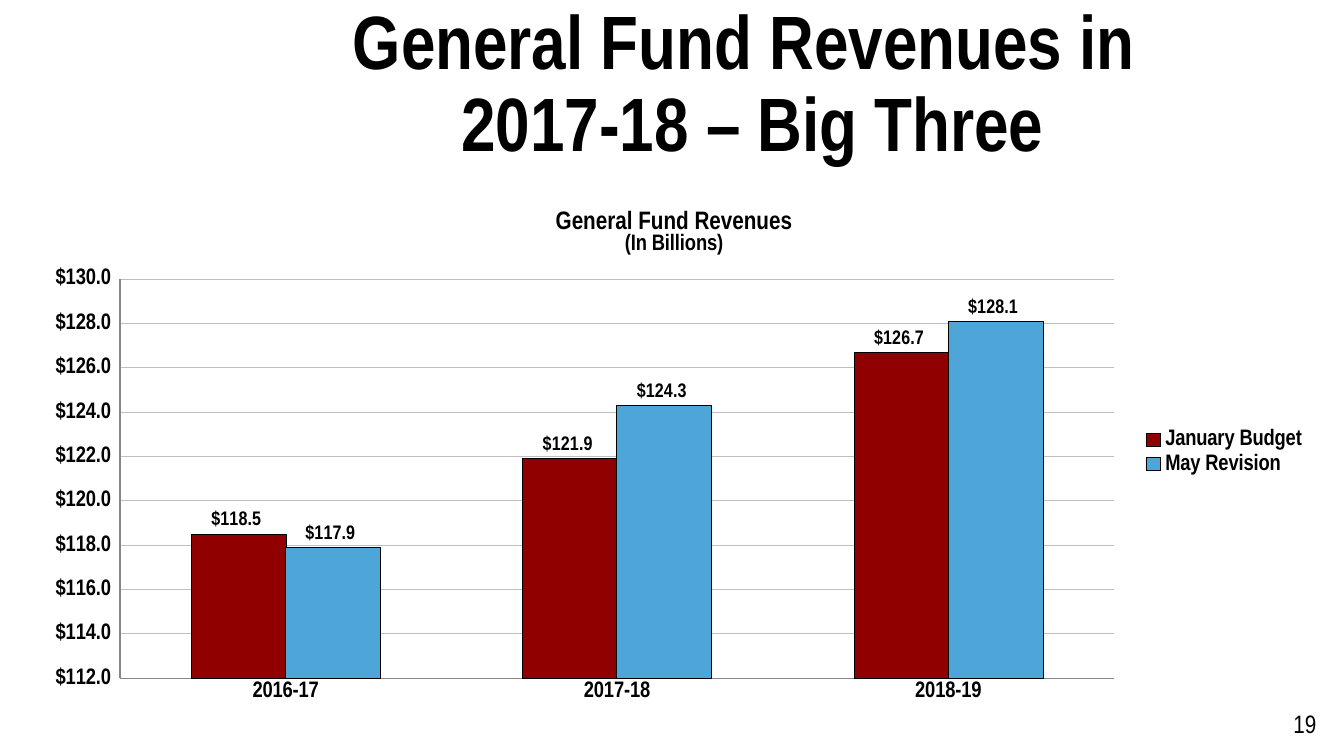
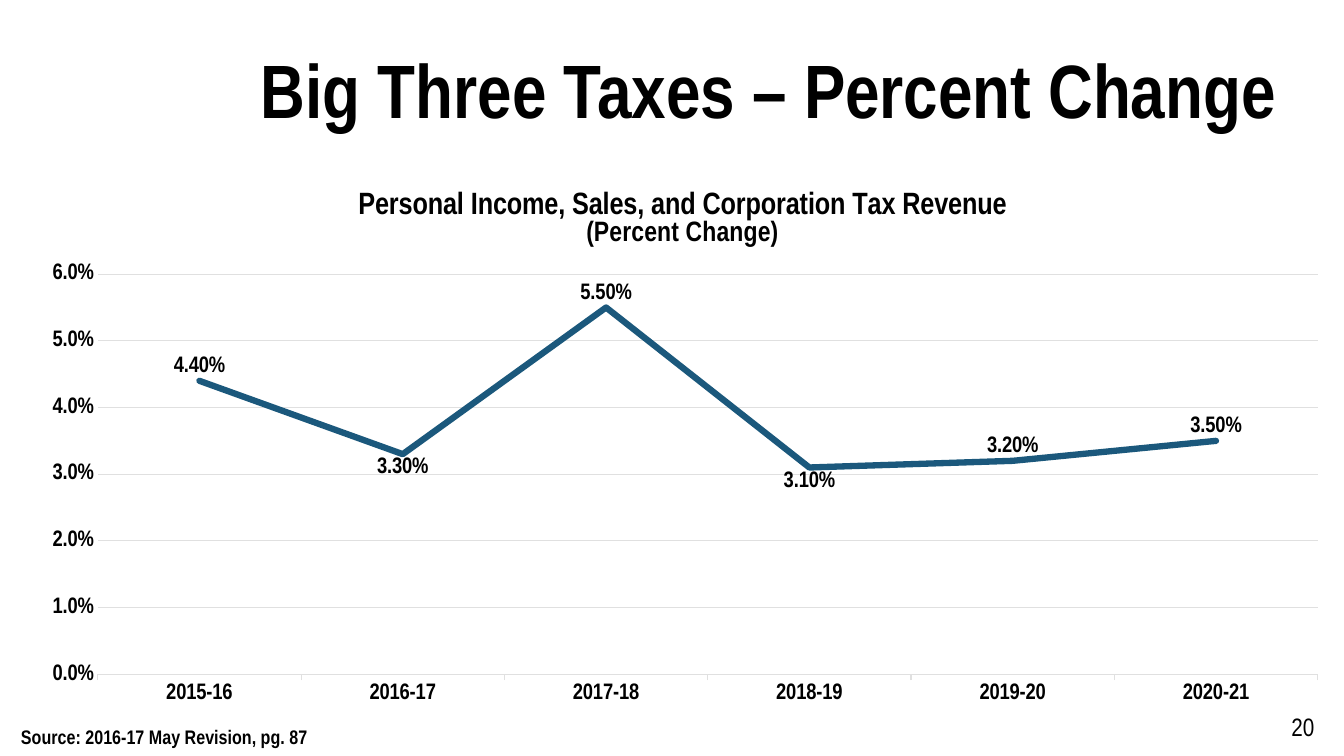
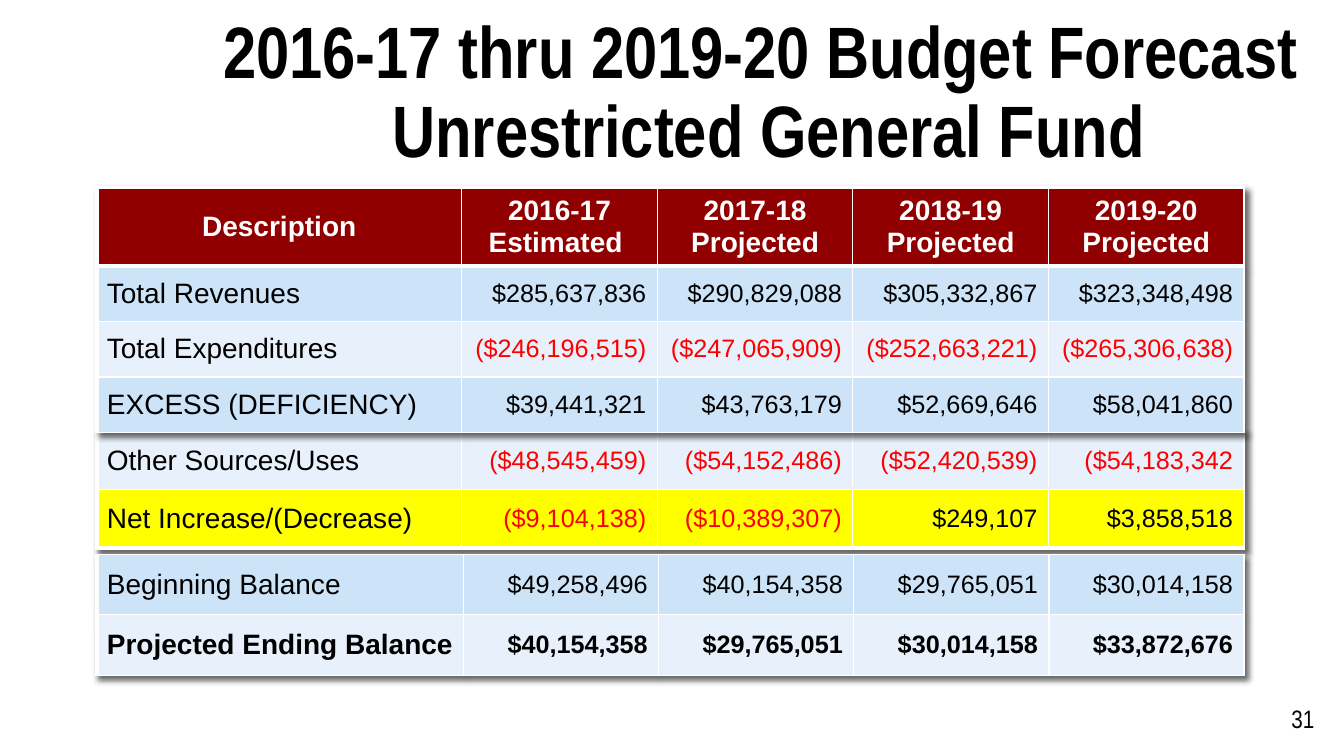
from dataclasses import dataclass

from lxml import etree
from pptx import Presentation
from pptx.chart.data import CategoryChartData
from pptx.dml.color import RGBColor
from pptx.enum.chart import XL_CHART_TYPE as ChartType
from pptx.enum.chart import XL_LABEL_POSITION as LabelPosition
from pptx.enum.chart import XL_LEGEND_POSITION as LegendPosition
from pptx.enum.chart import XL_TICK_MARK as TickMark
from pptx.enum.text import MSO_ANCHOR as Anchor
from pptx.enum.text import MSO_AUTO_SIZE as AutoSize
from pptx.enum.text import PP_ALIGN as Align
from pptx.oxml import parse_xml
from pptx.oxml.ns import nsdecls, qn
from pptx.util import Inches, Pt


@dataclass(frozen=True)
class Theme:
    """Hold the colours, fonts and type sizes that the slides share."""

    black: str = "000000"
    white: str = "FFFFFF"
    crimson: str = "900000"
    sky: str = "4EA5D8"
    navy: str = "1B587C"
    red: str = "FF0000"
    yellow: str = "FFFF00"
    band_dark: str = "CDE3F8"
    band_light: str = "E8F1FB"
    grid_dark: str = "BFBFBF"
    grid_light: str = "E0E0E0"
    axis_gray: str = "868686"
    narrow: str = "Arial Narrow"
    plain: str = "Arial"
    title_size: int = 54
    long_title_size: int = 52
    label_size: int = 20
    number_size: int = 18
    axis_size: int = 16
    small_size: int = 14


THEME = Theme()
TABLE_LEFT, TABLE_WIDTH = 0.96, 11.38
DOLLARS = '"$"#,##0.0_);[Red]\\("$"#,##0.0\\)'


def style_font(font, size, color=THEME.black, name=THEME.narrow, bold=False):
    """Set size, colour, typeface and weight of a font."""
    font.size = Pt(size)
    font.name = name
    font.bold = bold
    font.color.rgb = RGBColor.from_string(color)


def write_text(frame, text, sizes, align=Align.LEFT, spacing=None, **font_format):
    """Write one paragraph per line, with one size or a size for each line."""
    lines = text.split("\n")
    if isinstance(sizes, int):
        sizes = [sizes] * len(lines)
    for index, (line, size) in enumerate(zip(lines, sizes)):
        paragraph = frame.add_paragraph() if index else frame.paragraphs[0]
        paragraph.text = line
        paragraph.alignment = align
        if spacing:
            paragraph.line_spacing = spacing
        for run in paragraph.runs:
            style_font(run.font, size, **font_format)


def style_line(line, color, width):
    """Give a line a colour and a width in points."""
    line.color.rgb = RGBColor.from_string(color)
    line.width = Pt(width)


def add_text_box(slide, box, text, size, **font_format):
    """Add a text box that grows with its text."""
    frame = slide.shapes.add_textbox(*map(Inches, box)).text_frame
    frame.word_wrap = True
    frame.auto_size = AutoSize.SHAPE_TO_FIT_TEXT
    write_text(frame, text, size, **font_format)


def add_slide(presentation, title, number, title_corner, number_corner,
              size=THEME.title_size):
    """Add a slide with its title and page number."""
    slide = presentation.slides.add_slide(presentation.slide_layouts[5])
    shape = slide.shapes.title
    shape.left, shape.top = map(Inches, title_corner)
    shape.width, shape.height = Inches(11.23), Inches(1.45)
    frame = shape.text_frame
    frame.word_wrap = True
    frame.auto_size = AutoSize.NONE
    frame.vertical_anchor = Anchor.MIDDLE
    write_text(frame, title, size, align=Align.CENTER, spacing=0.9, bold=True)
    add_text_box(slide, (*number_corner, 0.53, 0.4), number, THEME.number_size)
    return slide


def place_plot(chart, chart_box, plot_box):
    """Fix the inner plot area, given in slide inches."""
    left, top, width, height = chart_box
    fractions = {
        "x": (plot_box[0] - left) / width,
        "y": (plot_box[1] - top) / height,
        "w": plot_box[2] / width,
        "h": plot_box[3] / height,
    }
    plot_area = chart.element.find(".//" + qn("c:plotArea"))
    for old_layout in plot_area.findall(qn("c:layout")):
        plot_area.remove(old_layout)
    layout = parse_xml(f"<c:layout {nsdecls('c')}><c:manualLayout/></c:layout>")
    settings = {"layoutTarget": "inner", "xMode": "edge", "yMode": "edge", **fractions}
    for tag, value in settings.items():
        etree.SubElement(layout[0], qn("c:" + tag)).set("val", str(value))
    plot_area.insert(0, layout)


def style_value_axis(axis, limits, step, number_format, grid_color):
    """Set scale, number format and gridlines of a value axis."""
    axis.minimum_scale, axis.maximum_scale = limits
    axis.major_unit = step
    axis.major_tick_mark = TickMark.NONE
    axis.tick_labels.number_format = number_format
    axis.tick_labels.number_format_is_linked = False
    axis.has_major_gridlines = True
    style_line(axis.major_gridlines.format.line, grid_color, 0.75)


def add_chart(slide, kind, box, plot_box, title, title_sizes, categories, series,
              number_format):
    """Add a chart with a two-line title and value labels."""
    data = CategoryChartData(number_format=number_format)
    data.categories = categories
    for name, values in series:
        data.add_series(name, values)
    chart = slide.shapes.add_chart(kind, *map(Inches, box), data).chart
    style_font(chart.font, THEME.axis_size, bold=True)
    chart.has_title = True
    chart.chart_title.include_in_layout = False
    write_text(chart.chart_title.text_frame, title, title_sizes,
               align=Align.CENTER, bold=True)
    chart.has_legend = False
    for axis in (chart.category_axis, chart.value_axis):
        style_font(axis.tick_labels.font, THEME.axis_size, bold=True)
    place_plot(chart, box, plot_box)
    plot = chart.plots[0]
    plot.vary_by_categories = False
    return chart, plot


def label_values(series, size, position, number_format):
    """Show the values of a series beside its points."""
    labels = series.data_labels
    labels.show_value = True
    labels.position = position
    labels.number_format = number_format
    labels.number_format_is_linked = False
    style_font(labels.font, size, bold=True)


def add_revenue_chart(slide):
    """Add the clustered columns of General Fund revenues."""
    chart, plot = add_chart(
        slide, ChartType.COLUMN_CLUSTERED,
        (0.3, 1.89, 12.77, 5.19), (1.19, 2.77, 9.86, 3.96),
        "General Fund Revenues\n(In Billions)", (18, 16),
        ("2016-17", "2017-18", "2018-19"),
        (("January Budget", (118.5, 121.9, 126.7)),
         ("May Revision", (117.9, 124.3, 128.1))),
        DOLLARS)
    plot.gap_width = 150
    plot.overlap = 1
    for series, color in zip(plot.series, (THEME.crimson, THEME.sky)):
        series.format.fill.solid()
        series.format.fill.fore_color.rgb = RGBColor.from_string(color)
        style_line(series.format.line, THEME.black, 0.5)
        label_values(series, THEME.small_size, LabelPosition.OUTSIDE_END, DOLLARS)
    style_value_axis(chart.value_axis, (112, 130), 2, DOLLARS, THEME.grid_dark)
    chart.category_axis.major_tick_mark = TickMark.NONE
    for axis in (chart.category_axis, chart.value_axis):
        style_line(axis.format.line, THEME.axis_gray, 0.75)
    chart.has_legend = True
    chart.legend.position = LegendPosition.RIGHT
    chart.legend.include_in_layout = False
    style_font(chart.legend.font, THEME.axis_size, bold=True)


def add_tax_chart(slide):
    """Add the line of yearly tax revenue changes."""
    chart, plot = add_chart(
        slide, ChartType.LINE,
        (0.21, 1.7, 13.12, 5.39), (0.97, 2.72, 12.1, 3.97),
        "Personal Income, Sales, and Corporation Tax Revenue\n(Percent Change)",
        (22, 20),
        ("2015-16", "2016-17", "2017-18", "2018-19", "2019-20", "2020-21"),
        (("Series 1", (0.044, 0.033, 0.055, 0.031, 0.032, 0.035)),),
        "0.00%")
    series = plot.series[0]
    series.smooth = False
    style_line(series.format.line, THEME.navy, 4.5)
    series.format.line.fill.solid()
    series.format.line.fill.fore_color.rgb = RGBColor.from_string(THEME.navy)
    for outline in chart.element.iterfind(f".//{qn('c:ser')}/{qn('c:spPr')}/{qn('a:ln')}"):
        outline.set("cap", "rnd")
    label_values(series, THEME.axis_size, LabelPosition.ABOVE, "0.00%")
    for index in (1, 3):
        label = series.points[index].data_label
        style_font(label.font, THEME.axis_size, bold=True)
        label.position = LabelPosition.BELOW
    style_value_axis(chart.value_axis, (0, 0.06), 0.01, "0.0%", THEME.grid_light)
    chart.value_axis.format.line.fill.background()
    chart.category_axis.major_tick_mark = TickMark.OUTSIDE
    style_line(chart.category_axis.format.line, THEME.grid_light, 0.75)


def set_borders(cell, left=1, right=1, top=1, bottom=1):
    """Draw white cell borders with widths in points."""
    properties = cell._tc.get_or_add_tcPr()
    for side, width in zip("LRTB", (left, right, top, bottom)):
        properties.append(parse_xml(
            f'<a:ln{side} {nsdecls("a")} w="{Pt(width)}"><a:solidFill>'
            f'<a:srgbClr val="{THEME.white}"/></a:solidFill></a:ln{side}>'))


def fill_cell(cell, text, fill, margins, borders, sizes, **text_format):
    """Fill a table cell with formatted text, a colour and borders."""
    set_borders(cell, **borders)
    cell.fill.solid()
    cell.fill.fore_color.rgb = RGBColor.from_string(fill)
    cell.vertical_anchor = Anchor.MIDDLE
    cell.margin_left = cell.margin_right = Inches(margins[0])
    cell.margin_top = cell.margin_bottom = Inches(margins[1])
    write_text(cell.text_frame, text, sizes, name=THEME.plain, **text_format)


def add_table_shadow(table):
    """Cast a soft shadow to the lower right of a table."""
    table._tbl.tblPr.insert(0, parse_xml(
        f'<a:effectLst {nsdecls("a")}><a:outerShdw blurRad="50800" dist="38100" '
        'dir="2700000" algn="tl" rotWithShape="0"><a:srgbClr val="000000">'
        '<a:alpha val="60000"/></a:srgbClr></a:outerShdw></a:effectLst>'))


def add_forecast_table(slide, top, label_width, heights, rows, fills,
                       header=False, thick_below=(), bold_rows=()):
    """Add one block of the forecast, with amounts in brackets in red."""
    column_count = len(rows[0])
    table = slide.shapes.add_table(
        len(rows), column_count, Inches(TABLE_LEFT), Inches(top),
        Inches(TABLE_WIDTH), Inches(sum(heights))).table
    table.first_row = header
    table.horz_banding = False
    add_table_shadow(table)
    number_width = (TABLE_WIDTH - label_width) / (column_count - 1)
    for index, column in enumerate(table.columns):
        column.width = Inches(number_width if index else label_width)
    for row_index, (row, fill) in enumerate(zip(rows, fills)):
        table.rows[row_index].height = Inches(heights[row_index])
        is_header = header and row_index == 0
        for column_index, text in enumerate(row):
            is_number = column_index > 0 and not is_header
            color = THEME.white if is_header else THEME.black
            if is_number and text.startswith("("):
                color = THEME.red
            align = Align.RIGHT if is_number else Align.LEFT
            fill_cell(
                table.cell(row_index, column_index), text, fill,
                (0.11, 0.06) if is_number else (0.1, 0.05),
                {"left": 1 if column_index else 3,
                 "top": 3 if is_header or row_index - 1 in thick_below else 1,
                 "bottom": 3 if row_index in thick_below else 1},
                THEME.number_size if is_number else THEME.label_size,
                align=Align.CENTER if is_header else align,
                color=color, bold=is_header or row_index in bold_rows)


def add_forecast(slide):
    """Add the three stacked blocks of the budget forecast."""
    add_forecast_table(
        slide, 4.28, 3.62, (0.58, 0.58),
        (("Other Sources/Uses", "($48,545,459)", "($54,152,486)",
          "($52,420,539)", "($54,183,342"),
         ("Net Increase/(Decrease)", "($9,104,138)", "($10,389,307)",
          "$249,107", "$3,858,518")),
        (THEME.band_light, THEME.yellow), thick_below=(1,))
    add_forecast_table(
        slide, 5.5, 3.64, (0.6, 0.6),
        (("Beginning Balance", "$49,258,496", "$40,154,358",
          "$29,765,051", "$30,014,158"),
         ("Projected Ending Balance", "$40,154,358", "$29,765,051",
          "$30,014,158", "$33,872,676")),
        (THEME.band_dark, THEME.band_light), bold_rows=(1,))
    add_forecast_table(
        slide, 1.86, 3.62, (0.78, 0.55, 0.55, 0.55),
        (("Description", "2016-17 Estimated ", "2017-18\nProjected",
          "2018-19\nProjected", "2019-20\nProjected"),
         ("Total Revenues", "$285,637,836", "$290,829,088",
          "$305,332,867", "$323,348,498"),
         ("Total Expenditures", "($246,196,515)", "($247,065,909)",
          "($252,663,221)", "($265,306,638)"),
         ("EXCESS (DEFICIENCY)", "$39,441,321", "$43,763,179",
          "$52,669,646", "$58,041,860")),
        (THEME.crimson, THEME.band_dark, THEME.band_light, THEME.band_dark),
        header=True, thick_below=(0,))


def main():
    """Build the three slides and save them."""
    presentation = Presentation()
    presentation.slide_width = Inches(13.33)
    presentation.slide_height = Inches(7.5)

    slide = add_slide(presentation, "General Fund Revenues in \v2017-18 – Big Three",
                      "19", (1.85, 0.13), (12.73, 6.98))
    add_revenue_chart(slide)

    slide = add_slide(presentation, "Big Three Taxes – Percent Change",
                      "20", (2.01, 0.21), (12.71, 7.01))
    add_tax_chart(slide)
    add_text_box(slide, (0.11, 7.14, 5.3, 0.34), "Source: 2016-17 May Revision, pg. 87",
                 THEME.small_size, bold=True)

    slide = add_slide(
        presentation,
        "2016-17 thru 2019-20 Budget Forecast \vUnrestricted General Fund",
        "31", (2.01, 0.21), (12.71, 6.93), size=THEME.long_title_size)
    add_forecast(slide)

    presentation.save("out.pptx")


if __name__ == "__main__":
    main()
